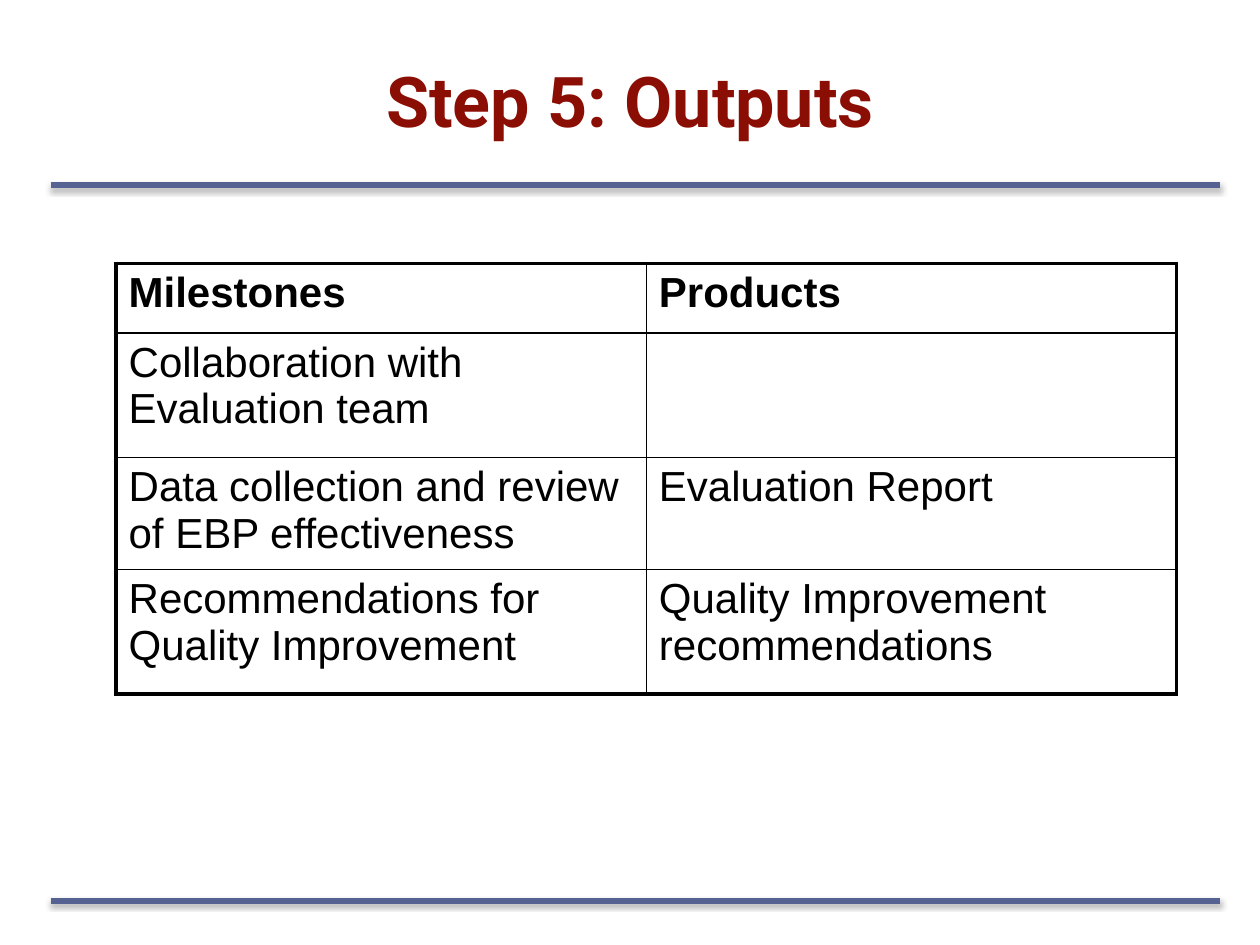
from lxml.etree import SubElement as Sub
from pptx import Presentation
from pptx.dml.color import RGBColor as RGB
from pptx.enum.shapes import MSO_CONNECTOR as CONN
from pptx.enum.text import MSO_ANCHOR as ANCHOR, PP_ALIGN as ALIGN
from pptx.oxml.ns import qn
from pptx.util import Cm, Pt

COLORS = {"title": "8B0E04", "rule": "556292", "text": "000000"}
THIN, THICK = 1, 2.25


class Deck:
    """Holds the text styles and the current slide."""

    styles = {
        "title": dict(name="Roboto", size=Pt(40), bold=True),
        "header": dict(name="Arial", size=Pt(24), bold=True),
        "body": dict(name="Arial", size=Pt(24), bold=False),
    }

    def __init__(self, prs):
        self.s = prs.slides.add_slide(prs.slide_layouts[5])

    def add_text(self, tf, text, style, color, align):
        p = tf.paragraphs[0]
        p.alignment = align
        p.space_before = Pt(0)
        r = p.add_run()
        r.text = text
        for key, value in self.styles[style].items():
            setattr(r.font, key, value)
        r.font.color.rgb = RGB.from_string(COLORS[color])

    def title(self, text, x, y, w, h):
        sp = self.s.shapes.title
        sp.left, sp.top, sp.width, sp.height = Cm(x), Cm(y), Cm(w), Cm(h)
        sp.text_frame.vertical_anchor = ANCHOR.MIDDLE
        self.add_text(sp.text_frame, text, "title", "title", ALIGN.CENTER)

    def rule(self, x1, x2, y):
        ln = self.s.shapes.add_connector(CONN.STRAIGHT, Cm(x1), Cm(y), Cm(x2), Cm(y))
        ln.line.color.rgb = RGB.from_string(COLORS["rule"])
        ln.line.width = Pt(3.25)
        # Soft shadow straight below the line
        effects = Sub(ln._element.spPr, qn("a:effectLst"))
        shadow = Sub(effects, qn("a:outerShdw"), blurRad=str(Pt(3.1)),
                     dist=str(Pt(1.6)), dir="5400000", rotWithShape="0")
        color = Sub(shadow, qn("a:srgbClr"), val=COLORS["text"])
        Sub(color, qn("a:alpha"), val="38000")

    def borders(self, cell, widths):
        tcPr = cell._tc.get_or_add_tcPr()
        for side, width in widths.items():
            ln = Sub(tcPr, qn(f"a:ln{side}"), w=str(Pt(width)))
            fill = Sub(ln, qn("a:solidFill"))
            Sub(fill, qn("a:srgbClr"), val=COLORS["text"])

    def table(self, rows, x, y, col_width, heights):
        n_rows, n_cols = len(rows), len(rows[0])
        tbl = self.s.shapes.add_table(n_rows, n_cols, Cm(x), Cm(y),
                                      Cm(col_width * n_cols), Cm(sum(heights))).table
        tbl.first_row = tbl.horz_banding = False
        for col in tbl.columns:
            col.width = Cm(col_width)
        for i, (texts, height) in enumerate(zip(rows, heights)):
            tbl.rows[i].height = Cm(height)
            for j, text in enumerate(texts):
                cell = tbl.cell(i, j)
                # Thick frame outside, thin grid inside
                outer = {"L": j == 0, "R": j == n_cols - 1,
                         "T": i == 0, "B": i == n_rows - 1}
                self.borders(cell, {k: THICK if v else THIN for k, v in outer.items()})
                cell.fill.background()
                if text:
                    self.add_text(cell.text_frame, text, "body" if i else "header",
                                  "text", ALIGN.LEFT)


def main():
    prs = Presentation()
    prs.slide_width, prs.slide_height = Cm(25.4), Cm(19.05)
    deck = Deck(prs)

    # Rules above and below the content
    for y in (3.73, 18.16):
        deck.rule(1.02, 24.59, y)

    # Title
    deck.title("Step 5: Outputs", 1.27, 0.76, 22.86, 2.51)

    # Milestones and their products
    deck.table([
        ("Milestones", "Products"),
        ("Collaboration with Evaluation team", ""),
        ("Data collection and review of EBP effectiveness", "Evaluation Report"),
        ("Recommendations for Quality Improvement",
         "Quality Improvement recommendations"),
    ], 2.34, 5.31, 10.69, (1.4, 2.51, 2.26, 2.51))

    prs.save("out.pptx")


if __name__ == "__main__":
    main()
